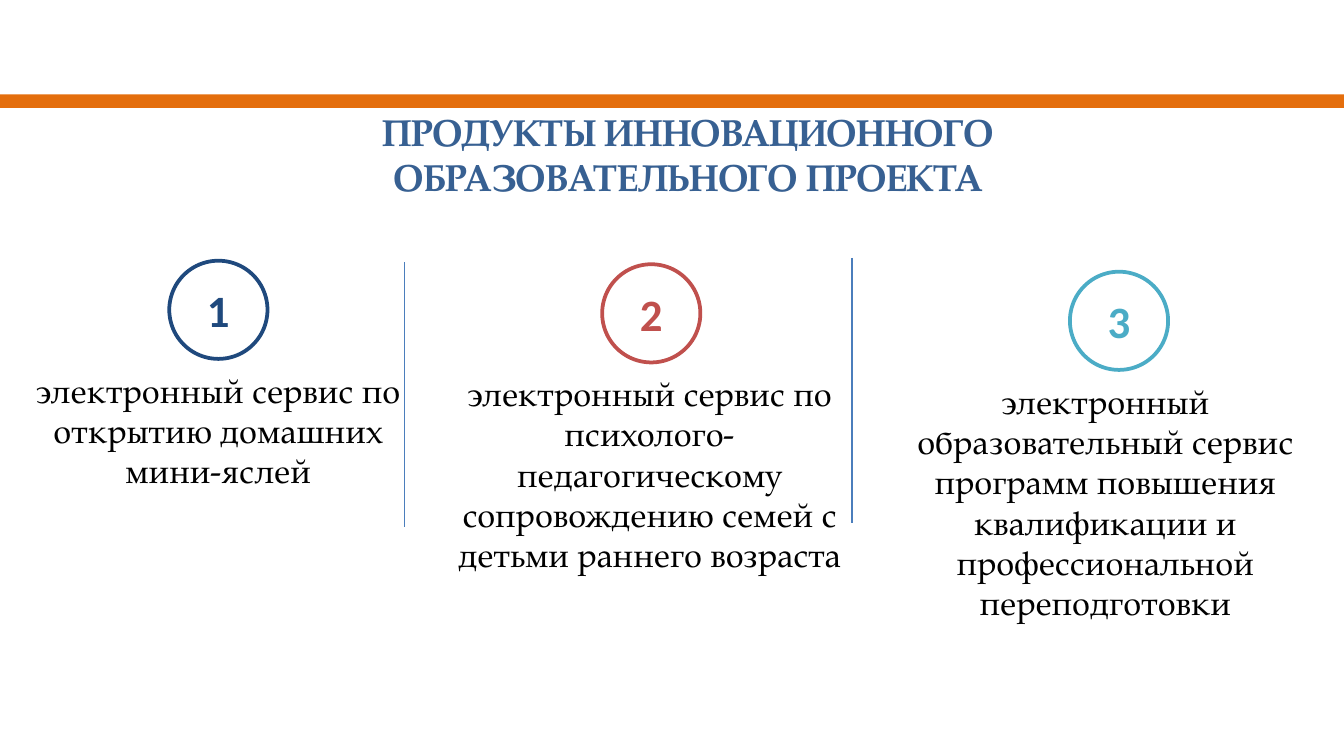
from lxml import etree
from pptx import Presentation
from pptx.dml.color import RGBColor
from pptx.enum import shapes, text
from pptx.oxml.ns import qn
from pptx.util import Pt

SERIF = "TeX Gyre Pagella"
CIRCLE_SIZE = 52.6
CAPTION_DROP = 54.7
DIVIDER_HEIGHT = 141.8

PRODUCTS = [
    ("1", "1F497D", 90.7, 139.7, 12.2, 209.5, 72.7,
     "электронный сервис по открытию домашних мини-яслей"),
    ("2", "C0504D", 322.6, 141.6, 237.6, 221, 138.2,
     "электронный сервис по психолого-педагогическому сопровождению "
     "семей с детьми раннего возраста"),
    ("3", "4BACC6", 573.2, 145.6, 462.2, 259.9, 159.8,
     "электронный образовательный сервис программ повышения "
     "квалификации и профессиональной переподготовки"),
]
DIVIDERS = [(216.7, 140.4), (456.5, 138.2)]


def color(value):
    return RGBColor.from_string(value)


def write(frame, wording, font, size, ink, bold, anchor):
    frame.text = wording
    frame.word_wrap = True
    frame.auto_size = text.MSO_AUTO_SIZE.NONE
    frame.vertical_anchor = anchor
    paragraph = frame.paragraphs[0]
    paragraph.alignment = text.PP_ALIGN.CENTER
    run = paragraph.runs[0]
    run.font.name = font
    run.font.size = Pt(size)
    run.font.bold = bold
    run.font.color.rgb = color(ink)


def add_band(slide):
    band = slide.shapes.add_shape(
        shapes.MSO_SHAPE.RECTANGLE, Pt(0), Pt(50.6), Pt(720), Pt(7.2))
    band.shadow.inherit = False
    band.fill.solid()
    band.fill.fore_color.rgb = color("E46E0D")
    band.line.fill.background()


def set_title(slide, wording):
    title = slide.shapes.title
    title.left, title.top = Pt(105.1), Pt(54.7)
    title.width, title.height = Pt(527), Pt(55.4)
    write(title.text_frame, wording, SERIF, 20, "376092", True,
          text.MSO_ANCHOR.MIDDLE)


def add_number(slide, number, accent, left, top):
    circle = slide.shapes.add_shape(
        shapes.MSO_SHAPE.OVAL, Pt(left), Pt(top),
        Pt(CIRCLE_SIZE), Pt(CIRCLE_SIZE))
    circle.shadow.inherit = False
    circle.fill.solid()
    circle.fill.fore_color.rgb = color("FFFFFF")
    circle.line.color.rgb = color(accent)
    circle.line.width = Pt(2)
    write(circle.text_frame, number, "Calibri", 24, accent, True,
          text.MSO_ANCHOR.MIDDLE)


def add_caption(slide, wording, left, top, width, height):
    caption = slide.shapes.add_textbox(
        Pt(left), Pt(top), Pt(width), Pt(height))
    write(caption.text_frame, wording, SERIF, 18, "000000", False,
          text.MSO_ANCHOR.TOP)


def add_divider(slide, x, top):
    divider = slide.shapes.add_connector(
        shapes.MSO_CONNECTOR.STRAIGHT,
        Pt(x), Pt(top), Pt(x), Pt(top + DIVIDER_HEIGHT))
    divider.line.color.rgb = color("4B7EBC")
    divider.line.width = Pt(0.75)
    etree.SubElement(divider._element.spPr, qn("a:effectLst"))


def main():
    deck = Presentation()
    deck.slide_width, deck.slide_height = Pt(720), Pt(405)
    slide = deck.slides.add_slide(deck.slide_layouts.get_by_name("Title Only"))
    add_band(slide)
    set_title(slide, "ПРОДУКТЫ ИННОВАЦИОННОГО ОБРАЗОВАТЕЛЬНОГО ПРОЕКТА")
    for number, accent, circle_left, top, left, width, height, wording in PRODUCTS:
        add_number(slide, number, accent, circle_left, top)
        add_caption(slide, wording, left, top + CAPTION_DROP, width, height)
    for x, top in DIVIDERS:
        add_divider(slide, x, top)
    deck.save("out.pptx")


if __name__ == "__main__":
    main()
